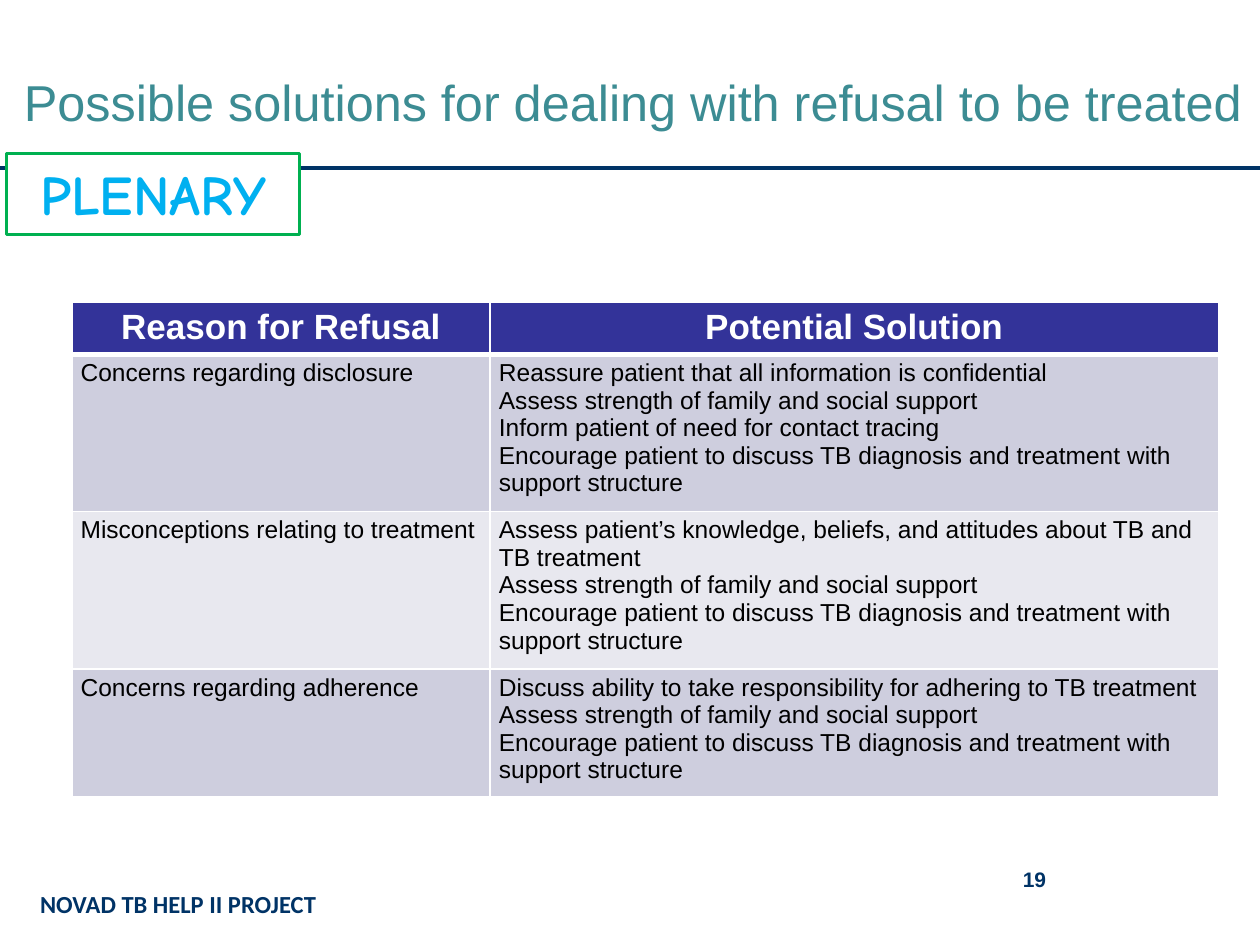
import pptx
import pptx.dml.color
import pptx.enum.shapes
import pptx.enum.text
import pptx.oxml.ns
import pptx.util
from lxml import etree
from pptx.util import Inches

COLORS = {
    "navy": "003366",
    "teal": "3C8C93",
    "header": "333399",
    "band_dark": "CECEDE",
    "band_light": "E8E8EF",
    "white": "FFFFFF",
    "black": "000000",
    "green": "00B050",
    "sky": "00B0F0",
}
ALIGN = pptx.enum.text.PP_ALIGN
ANCHOR = pptx.enum.text.MSO_ANCHOR


def rgb(name):
    return pptx.dml.color.RGBColor.from_string(COLORS[name])


def write_text(text_frame, text, size, color="black", font="Arial", bold=False,
               align=ALIGN.LEFT, anchor=ANCHOR.TOP):
    text_frame.word_wrap = True
    text_frame.vertical_anchor = anchor
    text_frame.text = text
    for paragraph in text_frame.paragraphs:
        paragraph.alignment = align
        for run in paragraph.runs:
            run.font.size = pptx.util.Pt(size)
            run.font.name = font
            run.font.bold = bold
            run.font.color.rgb = rgb(color)


presentation = pptx.Presentation()
presentation.slide_width = Inches(10)
presentation.slide_height = Inches(7.5)
slide = presentation.slides.add_slide(presentation.slide_layouts[6])
shapes = slide.shapes

rule = shapes.add_connector(pptx.enum.shapes.MSO_CONNECTOR.STRAIGHT,
                            Inches(0), Inches(1.33), Inches(10), Inches(1.33))
rule.line.color.rgb = rgb("navy")
rule.line.width = pptx.util.Pt(2.25)
etree.SubElement(rule._element.spPr, pptx.oxml.ns.qn("a:effectLst"))

footer = shapes.add_textbox(Inches(0.22), Inches(7.01), Inches(3.33), Inches(0.33))
write_text(footer.text_frame, "NOVAD TB HELP II PROJECT", 14, "navy", "Calibri", True)

title = shapes.add_textbox(Inches(0.05), Inches(0), Inches(9.95), Inches(1.09))
write_text(title.text_frame, "Possible solutions for dealing with refusal to be treated",
           28.8, "teal", align=ALIGN.CENTER, anchor=ANCHOR.BOTTOM)

family_support = "Assess strength of family and social support"
encourage = "Encourage patient to discuss TB diagnosis and treatment with support structure"
rows = [
    ("Reason for Refusal", ["Potential Solution"]),
    ("Concerns regarding disclosure", [
        "Reassure patient that all information is confidential",
        family_support,
        "Inform patient of need for contact tracing",
        encourage,
    ]),
    ("Misconceptions relating to treatment", [
        "Assess patient’s knowledge, beliefs, and attitudes about TB and TB treatment",
        family_support,
        encourage,
    ]),
    ("Concerns regarding adherence", [
        "Discuss ability to take responsibility for adhering to TB treatment",
        family_support,
        encourage,
    ]),
]
row_heights = [0.4, 1.2, 1.2, 0.97]
row_fills = ["header", "band_dark", "band_light", "band_dark"]

table = shapes.add_table(len(rows), 2, Inches(0.57), Inches(2.4),
                         Inches(9.1), Inches(sum(row_heights))).table
for column, width in zip(table.columns, [3.32, 5.78]):
    column.width = Inches(width)

for row_index, (reason, solutions) in enumerate(rows):
    table.rows[row_index].height = Inches(row_heights[row_index])
    is_header = row_index == 0
    for column_index, text in enumerate([reason, "\n".join(solutions)]):
        cell = table.cell(row_index, column_index)
        cell.margin_left = cell.margin_right = Inches(0.07)
        cell.margin_top = cell.margin_bottom = Inches(0.04)
        if is_header:
            write_text(cell.text_frame, text, 20, "white", bold=True, align=ALIGN.CENTER)
        else:
            write_text(cell.text_frame, text, 14)
        properties = cell._tc.get_or_add_tcPr()
        for side in ["L", "R", "T", "B"]:
            thick = (is_header and side == "B") or (row_index == 1 and side == "T")
            border = etree.SubElement(properties, pptx.oxml.ns.qn("a:ln" + side),
                                      w=str(pptx.util.Pt(3 if thick else 1)))
            fill = etree.SubElement(border, pptx.oxml.ns.qn("a:solidFill"))
            etree.SubElement(fill, pptx.oxml.ns.qn("a:srgbClr"), val=COLORS["white"])
        cell.fill.solid()
        cell.fill.fore_color.rgb = rgb(row_fills[row_index])

slide_number = shapes.add_textbox(Inches(7.17), Inches(6.83), Inches(2.08), Inches(0.5))
write_text(slide_number.text_frame, "19", 12, "navy", bold=True, align=ALIGN.CENTER)

plenary = shapes.add_shape(pptx.enum.shapes.MSO_SHAPE.RECTANGLE,
                           Inches(0.05), Inches(1.22), Inches(2.33), Inches(0.64))
plenary.shadow.inherit = False
plenary.fill.solid()
plenary.fill.fore_color.rgb = rgb("white")
plenary.line.color.rgb = rgb("green")
plenary.line.width = pptx.util.Pt(1.5)
write_text(plenary.text_frame, "PLENARY", 32, "sky", "Comic Neue", True, ALIGN.CENTER)

presentation.save("out.pptx")
